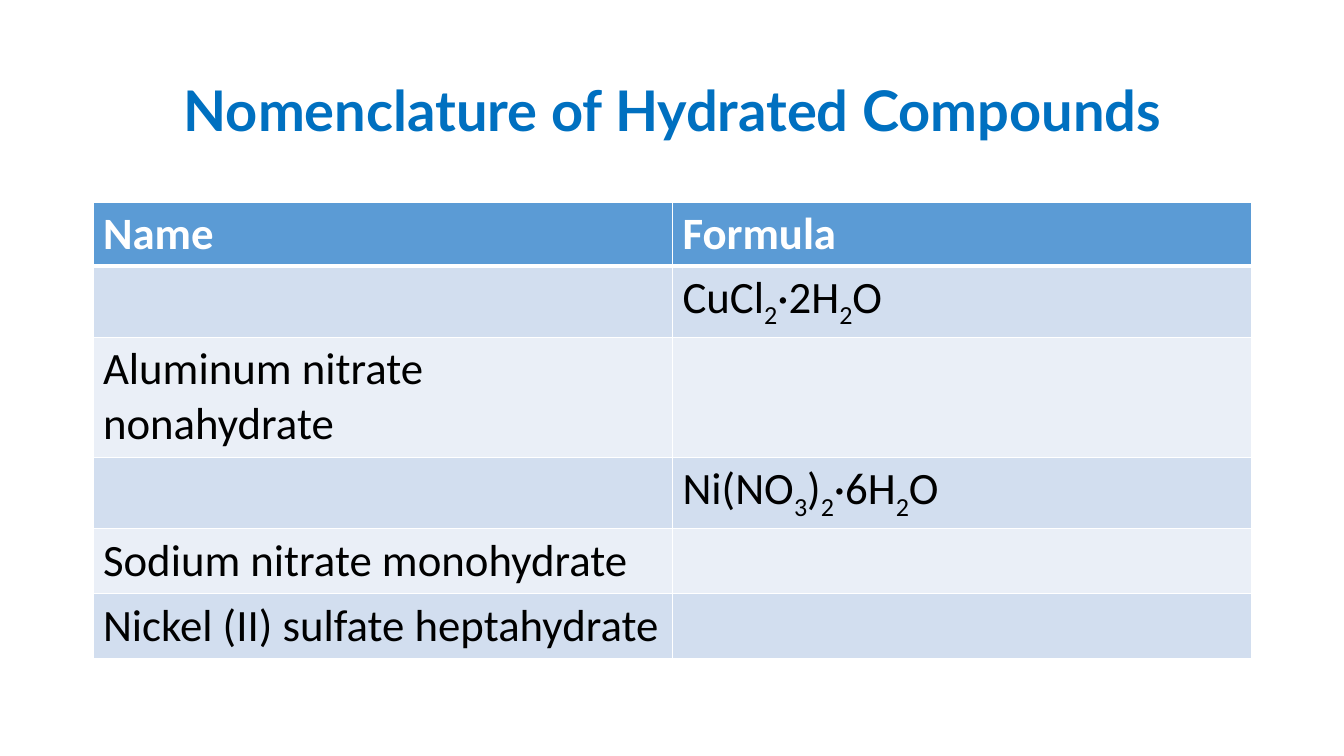
from typing import NamedTuple

from lxml import etree
from pptx import Presentation
from pptx import util as u
from pptx.dml.color import RGBColor
from pptx.enum import text
from pptx.oxml import ns

PX_PER_INCH = 100.8
WHITE, BLACK = "FFFFFF", "000000"
TITLE_BLUE, HEADER_BLUE = "0070C0", "5B9BD5"
BANDS = ("D2DEEF", "EAEFF7")


class Compound(NamedTuple):
    """A table row; underscores enclose subscripts in the formula."""
    name: str
    formula: str
    height: int


HEADER = Compound("Name", "Formula", 64)
COMPOUNDS = [
    Compound("", "CuCl_2_·2H_2_O", 71),
    Compound("Aluminum nitrate nonahydrate", "", 120),
    Compound("", "Ni(NO_3_)_2_·6H_2_O", 71),
    Compound("Sodium nitrate monohydrate", "", 65),
    Compound("Nickel (II) sulfate heptahydrate", "", 65),
]


def px(length: int) -> u.Length:
    return u.Inches(length / PX_PER_INCH)


def rgb(colour: str) -> RGBColor:
    return RGBColor.from_string(colour)


def add_span(para, words: str, face: str, size: int, colour: str, bold: bool):
    span = para.add_run()
    span.text = words
    span.font.name = face
    span.font.size = u.Pt(size)
    span.font.bold = bold
    span.font.color.rgb = rgb(colour)
    return span


def add_border(cell, side: str, points: int) -> None:
    line = etree.SubElement(cell._tc.get_or_add_tcPr(), ns.qn(f"a:ln{side}"),
                            w=str(u.Pt(points)))
    fill = etree.SubElement(line, ns.qn("a:solidFill"))
    etree.SubElement(fill, ns.qn("a:srgbClr"), val=WHITE)


def fill_cell(cell, words: str, fill: str, colour: str, bold: bool,
              top: int, bottom: int) -> None:
    # Borders must come before the fill in the cell's XML.
    for side, points in (("L", 1), ("R", 1), ("T", top), ("B", bottom)):
        add_border(cell, side, points)
    cell.fill.solid()
    cell.fill.fore_color.rgb = rgb(fill)
    para = cell.text_frame.paragraphs[0]
    for index, part in enumerate(words.split("_")):
        if part:
            span = add_span(para, part, "Calibri", 32, colour, bold)
            if index % 2:
                span._r.get_or_add_rPr().set("baseline", "-25000")


def add_title(page) -> None:
    box = page.shapes.add_textbox(px(93), px(40), px(1159), px(146))
    frame = box.text_frame
    frame.word_wrap = True
    frame.vertical_anchor = text.MSO_ANCHOR.MIDDLE
    para = frame.paragraphs[0]
    para.alignment = text.PP_ALIGN.CENTER
    para.line_spacing = 0.9
    add_span(para, "Nomenclature of Hydrated Compounds", "Lato", 40,
             TITLE_BLUE, True)


def add_compound_table(page) -> None:
    rows = [HEADER, *COMPOUNDS]
    table = page.shapes.add_table(
        len(rows), 2, px(93), px(202), px(1159),
        px(sum(row.height for row in rows))).table
    table.horz_banding = False
    for index, row in enumerate(rows):
        table.rows[index].height = px(row.height)
        is_header = index == 0
        fill = HEADER_BLUE if is_header else BANDS[(index - 1) % 2]
        for column, words in enumerate((row.name, row.formula)):
            fill_cell(table.cell(index, column), words, fill,
                      WHITE if is_header else BLACK, is_header,
                      top=3 if index == 1 else 1,
                      bottom=3 if is_header else 1)


def main() -> None:
    deck = Presentation()
    deck.slide_width, deck.slide_height = px(1344), px(756)
    page = deck.slides.add_slide(deck.slide_layouts[6])
    add_title(page)
    add_compound_table(page)
    deck.save("out.pptx")


if __name__ == "__main__":
    main()
